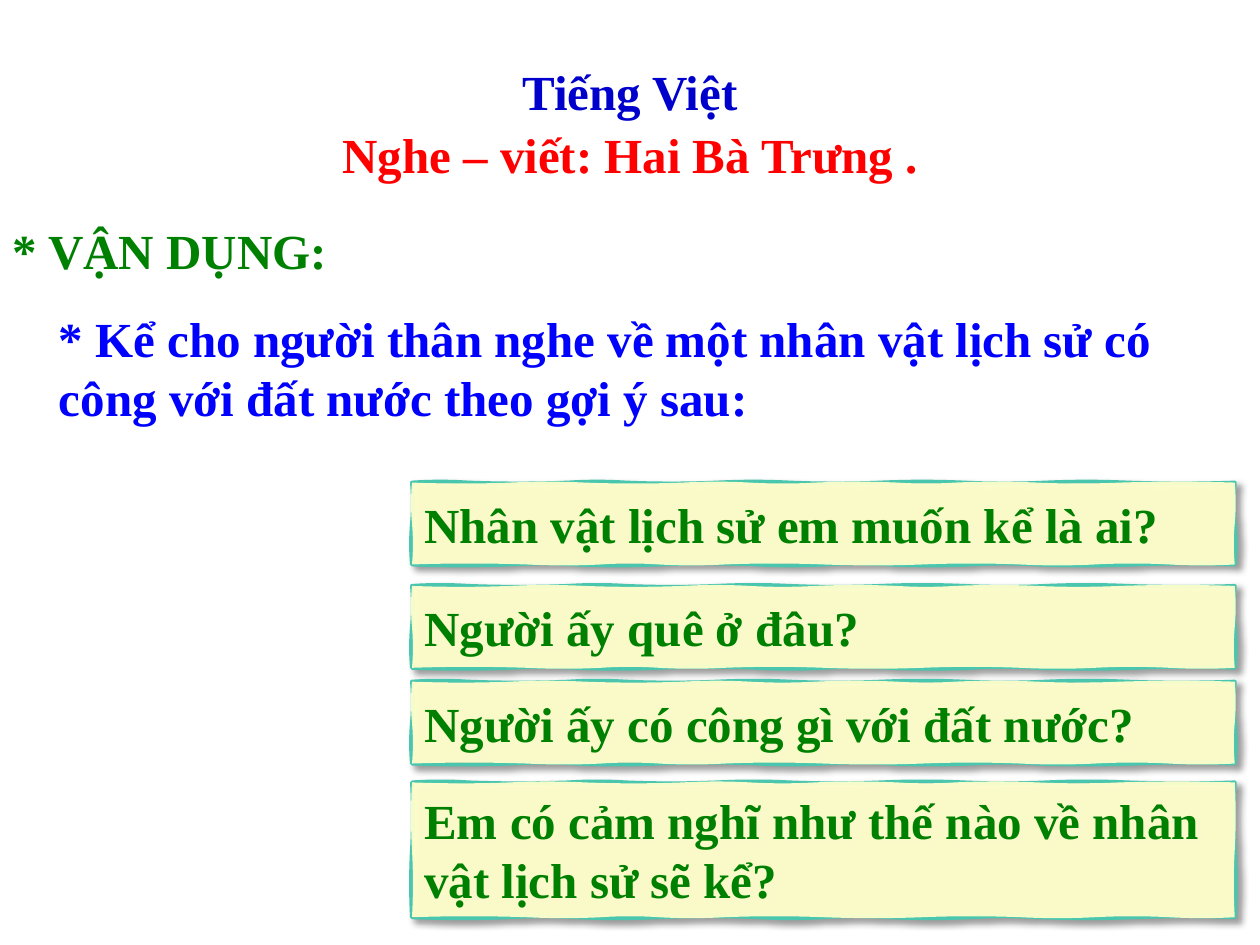
"""Build a Vietnamese lesson slide with four hand-drawn question cards."""
import copy

import lxml.etree
import pptx
import pptx.dml.color
import pptx.enum.text
import pptx.oxml.ns
import pptx.util

Inches = pptx.util.Inches
qn = pptx.oxml.ns.qn
COLORS = {"title": "0000CC", "topic": "FF0000", "green": "008000",
          "task": "0000FF", "card": "FFFFCC", "edge": "4AC6AE", "shade": "000000"}


def write(frame, text, color, align):
    frame.word_wrap = True
    para = frame.paragraphs[0]
    para.text = text
    para.alignment = align
    para.font.name = "Times New Roman"
    para.font.size = pptx.util.Pt(28)
    para.font.bold = True
    para.font.color.rgb = pptx.dml.color.RGBColor.from_string(COLORS[color])


def bend(track, swing):
    last = track.find(qn("a:moveTo"))[0]
    for line in track.findall(qn("a:lnTo")):
        end = line[0]
        x1, y1, x2, y2 = [int(spot.get(key)) for spot in (last, end) for key in "xy"]
        flat = y1 == y2
        curve = lxml.etree.Element(qn("a:cubicBezTo"))
        for part in (1 / 3, 2 / 3):
            x = x1 + (x2 - x1) * part + (0 if flat else swing)
            y = y1 + (y2 - y1) * part + (swing if flat else 0)
            lxml.etree.SubElement(curve, qn("a:pt"), x=str(round(x)), y=str(round(y)))
        curve.append(copy.deepcopy(end))
        track.replace(line, curve)
        last = curve[-1]
        swing = -swing


deck = pptx.Presentation()
deck.slide_width, deck.slide_height = Inches(10), Inches(7.5)
slide = deck.slides.add_slide(deck.slide_layouts[6])
left = pptx.enum.text.PP_ALIGN.LEFT
center = pptx.enum.text.PP_ALIGN.CENTER

start, stop = 3.27, 9.8
rim = ([3.72, 4.51, 4.97, 5.69, 6.27, 6.99, 7.65, 8.3, 8.95, stop],
       [9.02, 8.23, 7.71, 7.06, 6.54, 6.01, 5.23, 4.57, 4.05, start])
body = ([4.05, 4.64, 5.42, 5.95, 6.47, 7.12, 7.58, 8.23, 8.89, stop],
        [9.28, 8.69, 8.1, 7.32, 6.54, 5.75, 5.23, 4.77, 4.18, start])
cards = [
    (3.83, 0.65, "Nhân vật lịch sử em muốn kể là ai?"),
    (4.65, 0.65, "Người ấy quê ở đâu?"),
    (5.41, 0.65, "Người ấy có công gì với đất nước?"),
    (6.21, 1.07, "Em có cảm nghĩ như thế nào về nhân vật lịch sử sẽ kể?"),
]
for top, height, text in cards:
    base, mid = top + height, top + height / 2
    draft = slide.shapes.build_freeform(Inches(start), Inches(top))
    for upper, lower in (rim, body):
        if upper is body[0]:
            draft.move_to(Inches(start), Inches(top))
        spots = [(x, top) for x in upper] + [(stop, mid), (stop, base)]
        spots += [(x, base) for x in lower] + [(start, mid), (start, top)]
        draft.add_line_segments([(Inches(x), Inches(y)) for x, y in spots])
    card = draft.convert_to_shape()

    stroke = card.element.spPr.find(".//" + qn("a:path"))
    paint = copy.deepcopy(stroke)
    stroke.addnext(paint)
    half = len(stroke) // 2
    for node in list(stroke)[half:]:
        stroke.remove(node)
    for node in list(paint)[:half]:
        paint.remove(node)
    stroke.set("fill", "none")
    paint.set("stroke", "0")
    bend(stroke, Inches(-0.01))
    bend(paint, Inches(0.01))

    card.fill.solid()
    card.fill.fore_color.rgb = pptx.dml.color.RGBColor.from_string(COLORS["card"])
    tint = card.element.spPr.find(qn("a:solidFill") + "/" + qn("a:srgbClr"))
    lxml.etree.SubElement(tint, qn("a:alpha"), val="95000")
    card.line.color.rgb = pptx.dml.color.RGBColor.from_string(COLORS["edge"])
    card.line.width = pptx.util.Pt(2.25)
    card.shadow.inherit = False
    glow = lxml.etree.SubElement(
        card.element.spPr.find(qn("a:effectLst")), qn("a:outerShdw"),
        blurRad=str(pptx.util.Pt(4)), dist=str(pptx.util.Pt(3)),
        dir="2700000", algn="tl", rotWithShape="0")
    shade = lxml.etree.SubElement(glow, qn("a:srgbClr"), val=COLORS["shade"])
    lxml.etree.SubElement(shade, qn("a:alpha"), val="40000")

    card.text_frame.vertical_anchor = pptx.enum.text.MSO_ANCHOR.MIDDLE
    write(card.text_frame, text, "green", left)

labels = [
    (0.37, 2.4, 9.63, 1.04, "task", left, 0.1, 0.05,
     "* Kể cho người thân nghe về một nhân vật lịch sử có công với đất nước theo gợi ý sau:"),
    (0, 0.47, 10, 0.51, "title", center, 0.04, 0.02, "Tiếng Việt"),
    (0, 0.94, 10, 0.57, "topic", center, 0.1, 0.05, "Nghe – viết: Hai Bà Trưng ."),
    (0, 1.7, 4.84, 0.57, "green", left, 0.1, 0.05, "* VẬN DỤNG:"),
]
for x, y, width, height, color, align, side, edge, text in labels:
    box = slide.shapes.add_textbox(Inches(x), Inches(y), Inches(width), Inches(height))
    frame = box.text_frame
    frame.margin_left = frame.margin_right = Inches(side)
    frame.margin_top = frame.margin_bottom = Inches(edge)
    frame.auto_size = pptx.enum.text.MSO_AUTO_SIZE.SHAPE_TO_FIT_TEXT
    write(frame, text, color, align)

deck.save("out.pptx")
